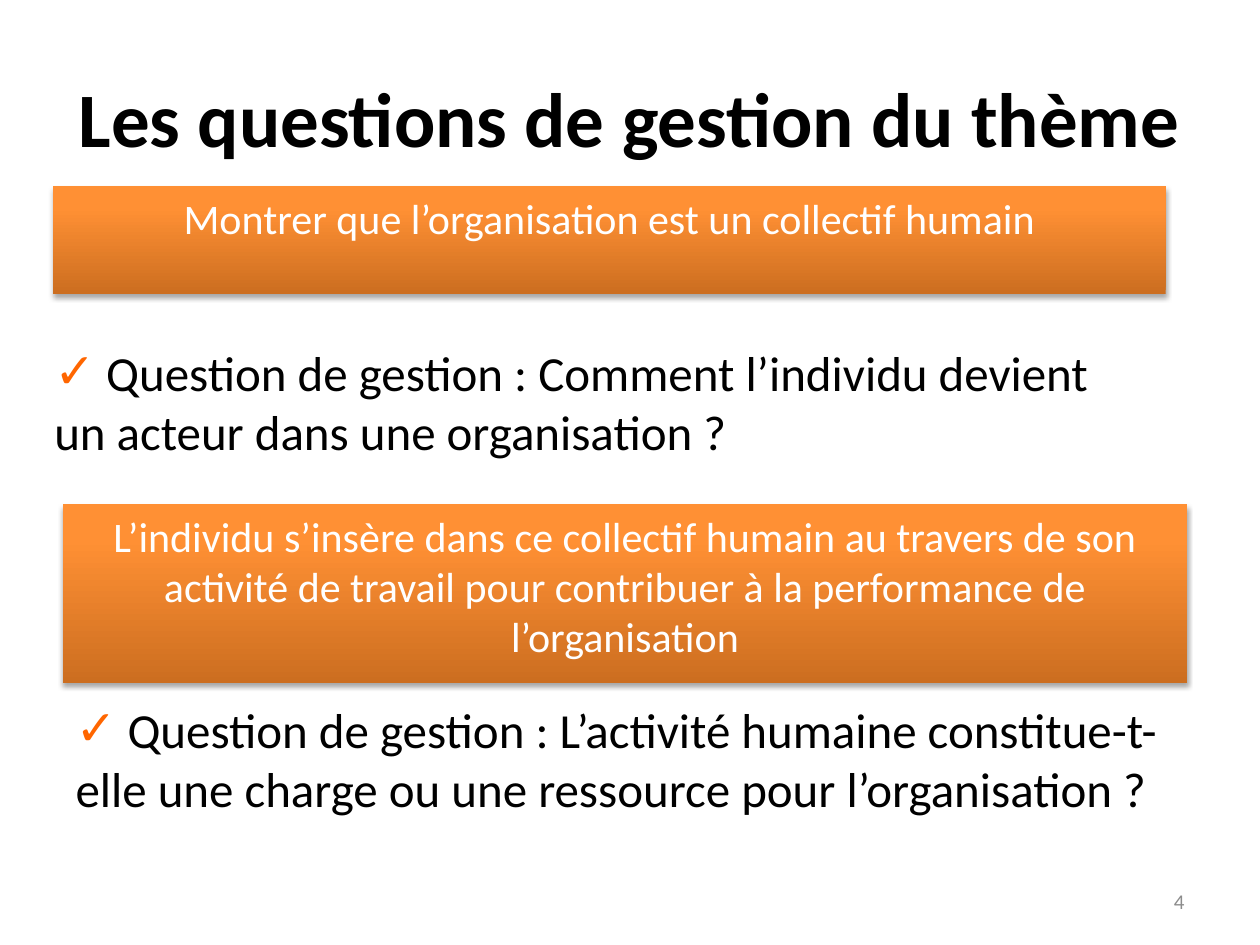
"""Build the slide on the management questions of the theme."""
import lxml.etree
import pptx
import pptx.dml.color
import pptx.enum.shapes
import pptx.enum.text
import pptx.oxml
import pptx.oxml.ns
import pptx.util

Cm = pptx.util.Cm
Pt = pptx.util.Pt
RGBColor = pptx.dml.color.RGBColor
ALIGN = pptx.enum.text.PP_ALIGN
ANCHOR = pptx.enum.text.MSO_ANCHOR
qn = pptx.oxml.ns.qn

BLACK = RGBColor(0x00, 0x00, 0x00)
WHITE = RGBColor(0xFF, 0xFF, 0xFF)
GREY = RGBColor(0x8C, 0x8C, 0x8C)
CHECK_ORANGE = RGBColor(0xFF, 0x66, 0x00)
BANNER_STOPS = [
    (0, RGBColor(0xCC, 0x6E, 0x20)),
    (80, RGBColor(0xFF, 0x90, 0x34)),
    (100, RGBColor(0xFF, 0x91, 0x36)),
]
NAMESPACE = pptx.oxml.ns.nsdecls("a")


def write(box, text, size, color, align, anchor, bold=False):
    frame = box.text_frame
    frame.word_wrap = True
    frame.vertical_anchor = anchor
    para = frame.paragraphs[0]
    para.alignment = align
    para.space_before = Pt(0)
    span = para.add_run()
    span.text = text
    span.font.name = "Calibri"
    span.font.size = Pt(size)
    span.font.bold = bold
    span.font.color.rgb = color
    return para


def place(box, left, top, width, height):
    box.left, box.top = Cm(left), Cm(top)
    box.width, box.height = Cm(width), Cm(height)


deck = pptx.Presentation()
deck.slide_width = Cm(25.4)
deck.slide_height = Cm(19.05)
page = deck.slides.add_slide(deck.slide_layouts.get_by_name("Two Content"))

title = page.shapes.title
place(title, 1.27, 0.76, 22.86, 3.18)
write(title, "Les questions de gestion du thème", 44, BLACK, ALIGN.CENTER, ANCHOR.MIDDLE, True)

number = page.shapes.add_textbox(Cm(18.21), Cm(17.65), Cm(5.92), Cm(1.02))
write(number, "4", 12, GREY, ALIGN.RIGHT, ANCHOR.MIDDLE)

questions = [
    (1, 0.84, 6.78, "Comment l’individu devient un acteur dans une organisation ?"),
    (2, 1.27, 13.97, "L’activité humaine constitue-t-elle une charge ou une ressource pour l’organisation ?"),
]
for index, left, top, question in questions:
    box = page.placeholders[index]
    place(box, left, top, 22.43, 2.64)
    box.text_frame.auto_size = pptx.enum.text.MSO_AUTO_SIZE.SHAPE_TO_FIT_TEXT
    para = write(box, f" Question de gestion : {question}", 28, BLACK, ALIGN.LEFT, ANCHOR.TOP)
    properties = para._p.get_or_add_pPr()
    properties.set("marL", "0")
    properties.set("indent", "0")
    bullet_color = lxml.etree.SubElement(properties, qn("a:buClr"))
    lxml.etree.SubElement(bullet_color, qn("a:srgbClr"), val=str(CHECK_ORANGE))
    lxml.etree.SubElement(properties, qn("a:buChar"), char="✓")

banners = [
    (1.07, 3.76, 22.43, 2.16, "Montrer que l’organisation est un collectif humain"),
    (1.27, 10.16, 22.66, 3.61,
     "L’individu s’insère dans ce collectif humain au travers de son activité "
     "de travail pour contribuer à la performance de l’organisation"),
]
stops = "".join(
    f'<a:gs pos="{position * 1000}"><a:srgbClr val="{color}"/></a:gs>'
    for position, color in BANNER_STOPS
)
gradient = (
    f'<a:gradFill {NAMESPACE} rotWithShape="1"><a:gsLst>{stops}</a:gsLst>'
    '<a:lin ang="16200000" scaled="0"/></a:gradFill>'
)
shadow = (
    f'<a:outerShdw {NAMESPACE} blurRad="{Pt(3.1)}" dist="{Pt(1.8)}" dir="5400000" rotWithShape="0">'
    f'<a:srgbClr val="{BLACK}"><a:alpha val="35000"/></a:srgbClr></a:outerShdw>'
)
for left, top, width, height, message in banners:
    banner = page.shapes.add_shape(
        pptx.enum.shapes.MSO_SHAPE.RECTANGLE, Cm(left), Cm(top), Cm(width), Cm(height)
    )
    banner.line.fill.background()
    banner.shadow.inherit = False
    shape_properties = banner._element.spPr
    shape_properties.find(qn("a:prstGeom")).addnext(pptx.oxml.parse_xml(gradient))
    shape_properties.find(qn("a:effectLst")).append(pptx.oxml.parse_xml(shadow))
    write(banner, message, 24, WHITE, ALIGN.CENTER, ANCHOR.TOP)

deck.save("out.pptx")
